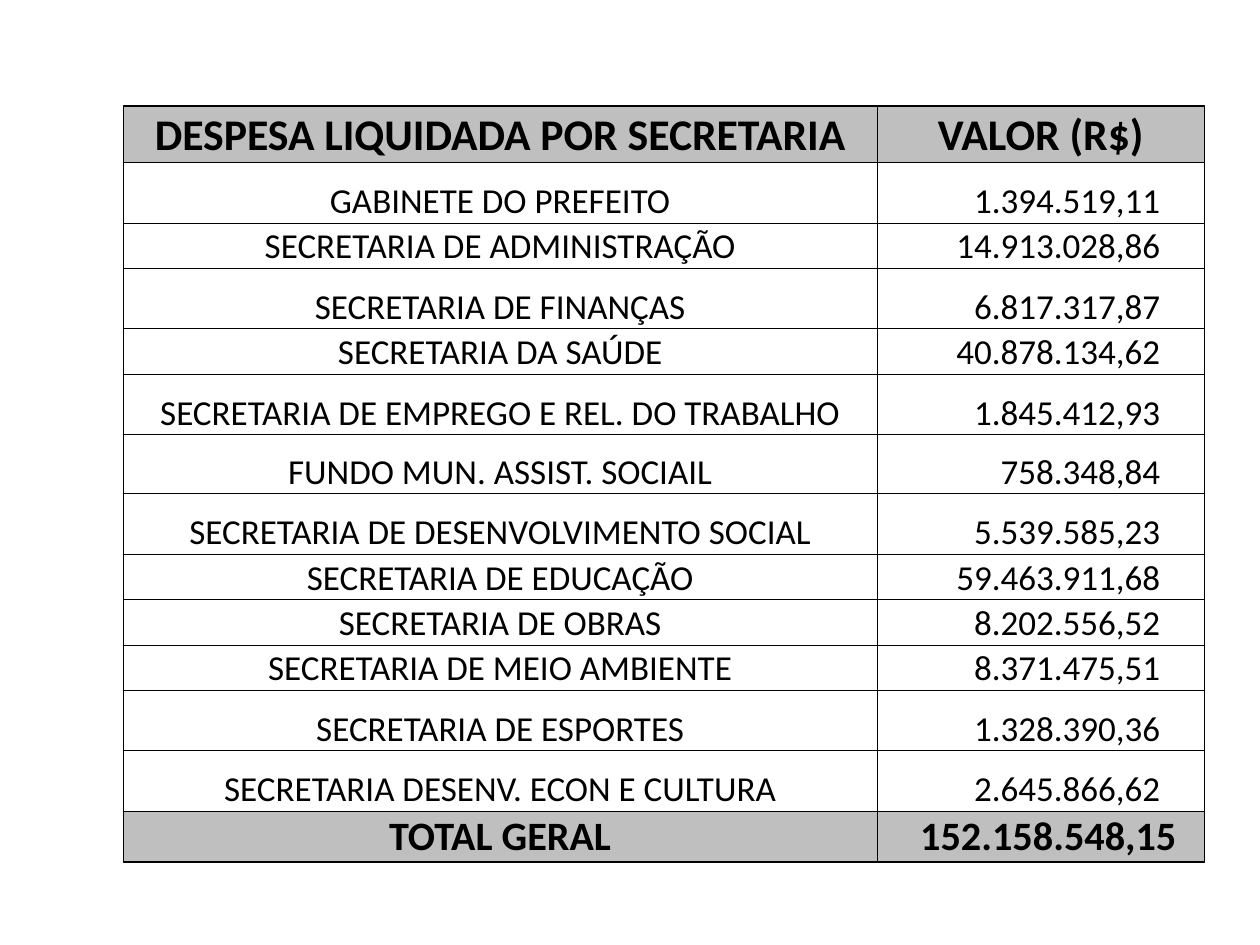
import pptx
import pptx.dml.color
import pptx.enum.text
import pptx.oxml
import pptx.oxml.ns
import pptx.util
from pptx.util import Inches

BLACK = pptx.dml.color.RGBColor(0x00, 0x00, 0x00)
GRAY = pptx.dml.color.RGBColor(0xBF, 0xBF, 0xBF)
ALIGN = pptx.enum.text.PP_ALIGN

HEADER = ("DESPESA LIQUIDADA POR SECRETARIA", "VALOR (R$)")
TOTAL = ("TOTAL GERAL", "152.158.548,15")
# Department, amount, row height in inches
EXPENSES = [
    ("GABINETE DO PREFEITO", "1.394.519,11", 0.48),
    ("SECRETARIA DE ADMINISTRAÇÃO", "14.913.028,86", 0.36),
    ("SECRETARIA DE FINANÇAS", "6.817.317,87", 0.48),
    ("SECRETARIA DA SAÚDE", "40.878.134,62", 0.36),
    ("SECRETARIA DE EMPREGO E REL. DO TRABALHO", "1.845.412,93", 0.48),
    ("FUNDO MUN. ASSIST. SOCIAIL", "758.348,84", 0.47),
    ("SECRETARIA DE DESENVOLVIMENTO SOCIAL", "5.539.585,23", 0.48),
    ("SECRETARIA DE EDUCAÇÃO", "59.463.911,68", 0.36),
    ("SECRETARIA DE OBRAS", "8.202.556,52", 0.36),
    ("SECRETARIA DE MEIO AMBIENTE", "8.371.475,51", 0.36),
    ("SECRETARIA DE ESPORTES", "1.328.390,36", 0.48),
    ("SECRETARIA DESENV. ECON E CULTURA", "2.645.866,62", 0.48),
]
COL_WIDTHS = (5.98, 2.6)
ROW_HEIGHTS = [0.45] + [h for _, _, h in EXPENSES] + [0.4]


class Deck:
    """Holds the style and the current slide."""

    font = "Calibri"

    def __init__(self, prs):
        self.s = prs.slides.add_slide(prs.slide_layouts[6])

    def table(self, left, top, widths, heights):
        sp = self.s.shapes.add_table(
            len(heights), len(widths), Inches(left), Inches(top),
            Inches(sum(widths)), Inches(sum(heights)))
        tbl = sp.table
        tbl.first_row = tbl.horz_banding = False
        for col, w in zip(tbl.columns, widths):
            col.width = Inches(w)
        for row, h in zip(tbl.rows, heights):
            row.height = Inches(h)
        return tbl

    def borders(self, cell, widths):
        tc_pr = cell._tc.get_or_add_tcPr()
        for i, (side, width) in enumerate(zip("LRTB", widths)):
            tc_pr.insert(i, pptx.oxml.parse_xml(
                f'<a:ln{side} {pptx.oxml.ns.nsdecls("a")} w="{pptx.util.Pt(width)}">'
                f'<a:solidFill><a:srgbClr val="{BLACK}"/></a:solidFill></a:ln{side}>'))

    def cell(self, cell, text, size, bold=False, fill=None,
             align=ALIGN.CENTER, right=0.01):
        fmt = {"margin_left": Inches(0.01), "margin_right": Inches(right),
               "margin_top": Inches(0.01), "margin_bottom": 0,
               "vertical_anchor": pptx.enum.text.MSO_ANCHOR.BOTTOM}
        for name, value in fmt.items():
            setattr(cell, name, value)
        if fill is None:
            cell.fill.background()
        else:
            cell.fill.solid()
            cell.fill.fore_color.rgb = fill
        p = cell.text_frame.paragraphs[0]
        p.alignment = align
        r = p.add_run()
        r.text = text
        for name, value in {"name": self.font, "size": pptx.util.Pt(size),
                            "bold": bold}.items():
            setattr(r.font, name, value)
        r.font.color.rgb = BLACK


def main():
    prs = pptx.Presentation()
    prs.slide_width, prs.slide_height = Inches(10), Inches(7.5)
    deck = Deck(prs)
    tbl = deck.table(0.98, 0.84, COL_WIDTHS, ROW_HEIGHTS)
    last = len(ROW_HEIGHTS) - 1

    # Header row
    for col, text in enumerate(HEADER):
        deck.cell(tbl.cell(0, col), text, 25, bold=True, fill=GRAY)

    # One row per department
    for row, (name, amount, _) in enumerate(EXPENSES, start=1):
        deck.cell(tbl.cell(row, 0), name, 20)
        deck.cell(tbl.cell(row, 1), amount, 20, align=ALIGN.RIGHT, right=0.35)

    # Total row
    deck.cell(tbl.cell(last, 0), TOTAL[0], 23, bold=True, fill=GRAY)
    deck.cell(tbl.cell(last, 1), TOTAL[1], 23, bold=True, fill=GRAY,
              align=ALIGN.RIGHT, right=0.22)

    # Thicker lines around the outside, thin ones inside
    for row in range(last + 1):
        for col in range(2):
            outer = (col == 0, col == 1, row == 0, row == last)
            deck.borders(tbl.cell(row, col), [1 if o else 0.5 for o in outer])

    prs.save("out.pptx")


if __name__ == "__main__":
    main()
